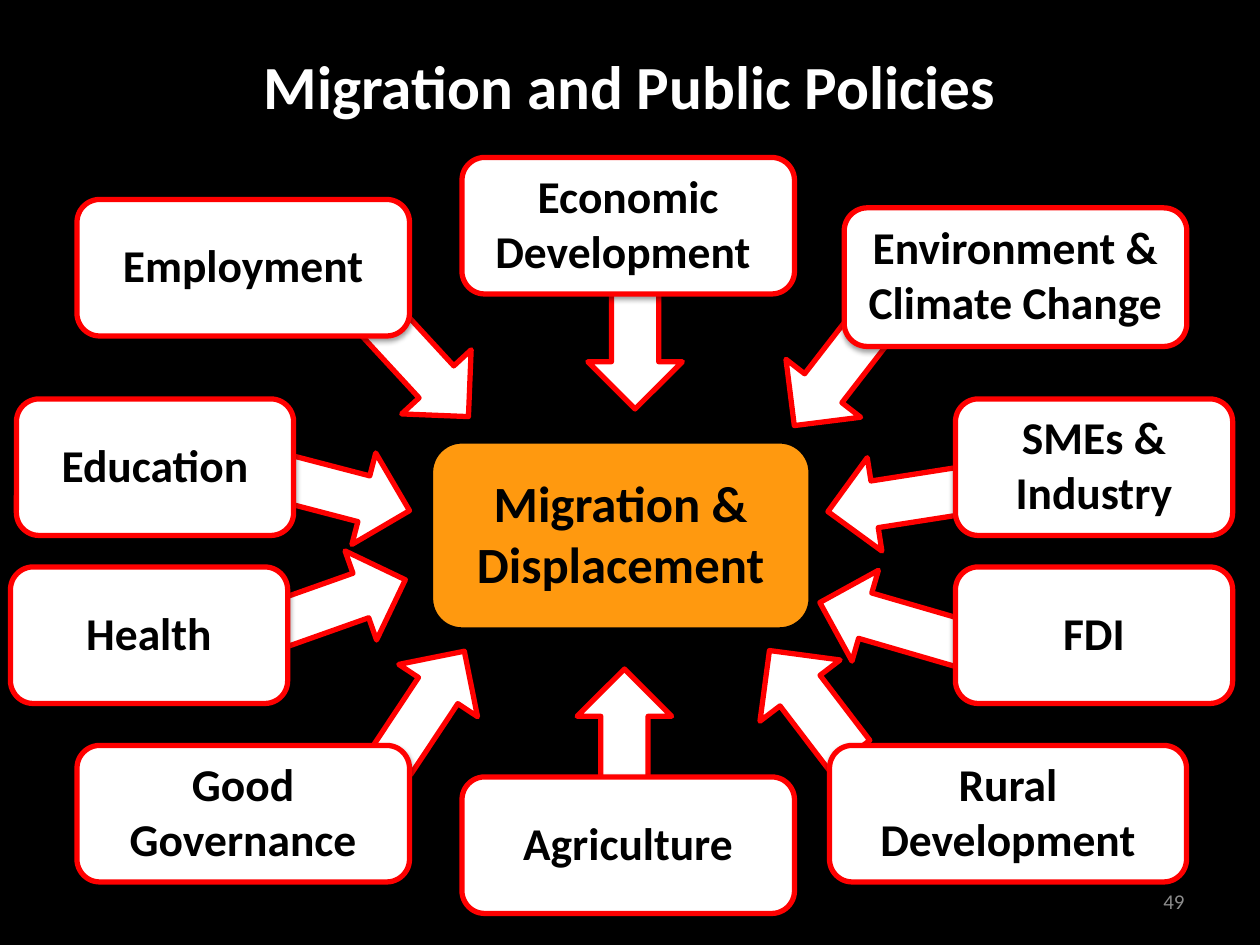
from lxml import etree
from pptx import Presentation
from pptx.dml.color import RGBColor
from pptx.enum.shapes import MSO_SHAPE
from pptx.enum.text import MSO_ANCHOR, PP_ALIGN
from pptx.oxml.ns import qn
from pptx.util import Pt

RECTANGLE, ROUNDED, ARROW = MSO_SHAPE.RECTANGLE, MSO_SHAPE.ROUNDED_RECTANGLE, MSO_SHAPE.LEFT_ARROW
CENTER, RIGHT = PP_ALIGN.CENTER, PP_ALIGN.RIGHT
TOP, MIDDLE = MSO_ANCHOR.TOP, MSO_ANCHOR.MIDDLE

COLORS = {"black": "000000", "white": "FFFFFF", "red": "FF0000",
          "orange": "FF990F", "gray": "8C8C8C", "paper": "F8F8F8"}
SLIDE_SIZE = (720, 540)
FONT = "Calibri"

TITLE = ("Migration and Public Policies", (36, 24, 648, 78))
PAGE_NUMBER = ("49", (516.5, 500.5, 167.5, 28.8))
HUB = ("Migration & Displacement", (246, 252, 217.5, 108))

# policy, box (left, top, width, height), arrow (center x, center y, length, width, rotation)
POLICIES = [
    ("Education", (9.4, 228, 158.4, 78), (168.5, 274.7, 135.4, 54, 194.6)),
    ("Health", (6, 324, 158.4, 78), (167.8, 353.9, 135.4, 54, 160.5)),
    ("Good Governance", (44, 426, 190, 78), (244.4, 403.6, 75.6, 54, 123.6)),
    ("Rural Development", (474, 426, 204, 78), (462.6, 401.8, 75.6, 57.6, 52.6)),
    ("FDI", (546, 324, 158.4, 78), (533.5, 363.2, 135.4, 54, 16.2)),
    ("SMEs & Industry", (546, 228, 158.4, 78), (540, 281.9, 135.4, 54, 351.1)),
    ("Economic Development ", (264, 90, 190, 78), (362.9, 176.8, 113.8, 54, 270)),
    ("Employment", (44, 114, 190, 78), (221.8, 188.3, 135.4, 54, 227.3)),
    ("Environment & Climate Change", (482.4, 118.8, 195.8, 79.2), (495.4, 189.7, 135.4, 54, 307.8)),
    ("Agriculture", (264, 444, 190, 78), (356.8, 420.1, 75.6, 54, 90)),
]


def color(name):
    return RGBColor.from_string(COLORS[name])


def add_shadow(shape, blur=3.1, distance=1.6, opacity=38):
    shape.shadow.inherit = False
    effects = shape.element.spPr.find(qn("a:effectLst"))
    shadow = etree.SubElement(effects, qn("a:outerShdw"), blurRad=str(Pt(blur)),
                              dist=str(Pt(distance)), dir="5400000", rotWithShape="0")
    tint = etree.SubElement(shadow, qn("a:srgbClr"), val=COLORS["black"])
    etree.SubElement(tint, qn("a:alpha"), val=str(opacity * 1000))


def add_shape(slide, kind, frame, fill, line=None):
    shape = slide.shapes.add_shape(kind, *map(Pt, frame))
    shape.fill.solid()
    shape.fill.fore_color.rgb = color(fill)
    if line:
        shape.line.color.rgb = color(line)
        shape.line.width = Pt(3)
    else:
        shape.line.fill.background()
    add_shadow(shape)
    return shape


def write(shape, text, size, ink="black", bold=True, align=CENTER, anchor=MIDDLE,
          margins=(7.2, 3.6, 7.2, 3.6), space_after=0):
    frame = shape.text_frame
    frame.word_wrap = True
    frame.vertical_anchor = anchor
    for side, margin in zip(("left", "top", "right", "bottom"), margins):
        setattr(frame, f"margin_{side}", Pt(margin))
    para = frame.paragraphs[0]
    para.alignment = align
    para.space_after = Pt(space_after)
    span = para.add_run()
    span.text = text
    for name, value in {"name": FONT, "size": Pt(size), "bold": bold}.items():
        setattr(span.font, name, value)
    span.font.color.rgb = color(ink)


def add_arrow(slide, center_x, center_y, length, width, rotation):
    frame = (center_x - length / 2, center_y - width / 2, length, width)
    add_shape(slide, ARROW, frame, "white", "red").rotation = rotation


def main():
    deck = Presentation()
    deck.slide_width, deck.slide_height = map(Pt, SLIDE_SIZE)
    slide = deck.slides.add_slide(deck.slide_layouts[6])
    slide.background.fill.solid()
    slide.background.fill.fore_color.rgb = color("paper")
    add_shape(slide, RECTANGLE, (0, 0, *SLIDE_SIZE), "black")

    for _, _, arrow in POLICIES:
        add_arrow(slide, *arrow)

    text, frame = TITLE
    write(slide.shapes.add_textbox(*map(Pt, frame)), text, 35, "white", anchor=TOP)
    text, frame = PAGE_NUMBER
    write(slide.shapes.add_textbox(*map(Pt, frame)), text, 12, "gray", bold=False, align=RIGHT)

    text, frame = HUB
    write(add_shape(slide, ROUNDED, frame, "orange", "black"), text, 29,
          margins=(2.9, 0, 2.9, 3.6))
    for text, frame, _ in POLICIES:
        write(add_shape(slide, ROUNDED, frame, "white", "red"), text, 26,
              margins=(7.2, 0, 7.2, 3.6), space_after=6)

    deck.save("out.pptx")


if __name__ == "__main__":
    main()
